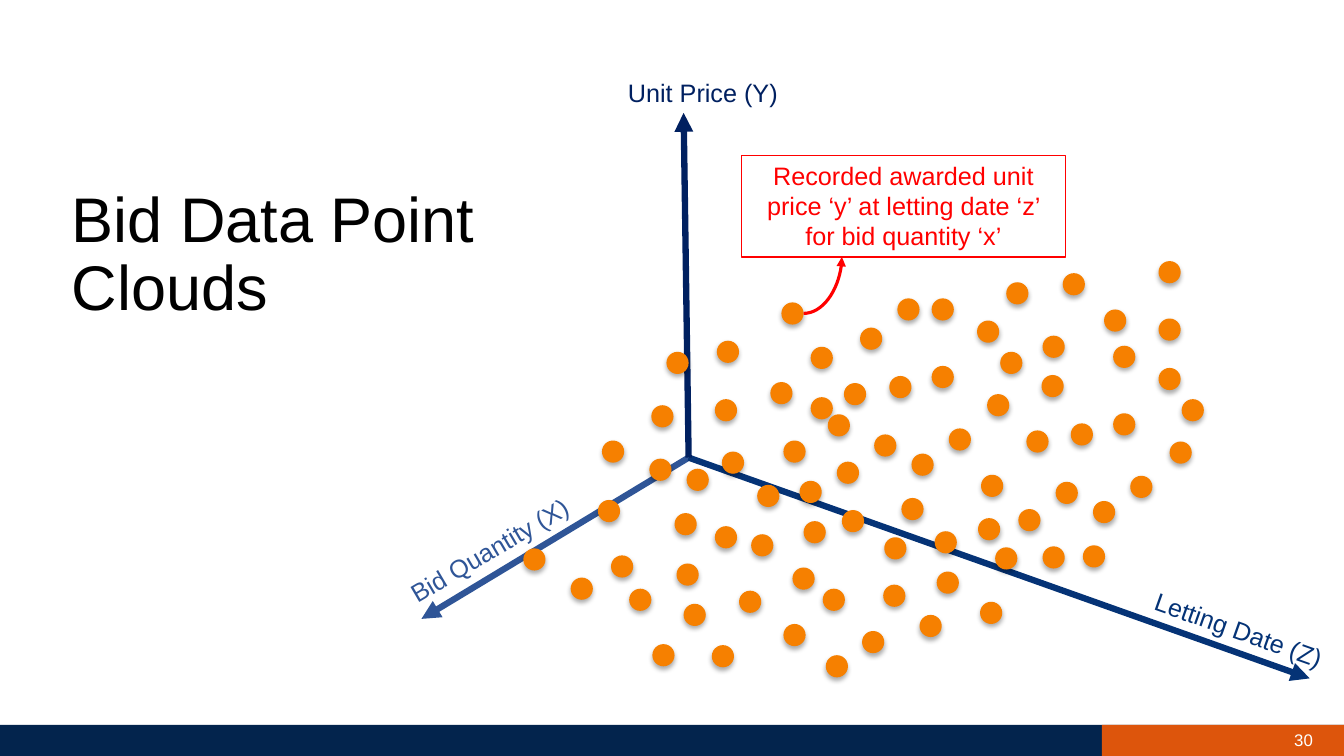
from lxml import etree
from pptx import Presentation
from pptx import util as u
from pptx.dml.color import RGBColor
from pptx.enum import shapes, text
from pptx.oxml import parse_xml
from pptx.oxml.ns import nsdecls, qn

BLACK = RGBColor(0x00, 0x00, 0x00)
WHITE = RGBColor(0xFF, 0xFF, 0xFF)
NAVY = RGBColor(0x03, 0x24, 0x4D)
BURNT_ORANGE = RGBColor(0xDD, 0x55, 0x0C)
DOT_ORANGE = RGBColor(0xF6, 0x80, 0x00)
PRICE_BLUE = RGBColor(0x00, 0x20, 0x60)
QUANTITY_BLUE = RGBColor(0x2F, 0x55, 0x97)
DATE_BLUE = RGBColor(0x05, 0x33, 0x76)
RED = RGBColor(0xFF, 0x00, 0x00)

DOT_SIZE = 0.22
DOT_SHADOW = f"""<a:effectLst {nsdecls('a')}>
  <a:outerShdw blurRad="44450" dist="27940" dir="5400000" algn="ctr" rotWithShape="0">
    <a:srgbClr val="000000"><a:alpha val="32000"/></a:srgbClr>
  </a:outerShdw>
</a:effectLst>"""

deck = Presentation()
deck.slide_width, deck.slide_height = u.Inches(13.33), u.Inches(7.5)
slide = deck.slides.add_slide(deck.slide_layouts[5])


def write(holder, wording, size, color, align=text.PP_ALIGN.LEFT, **frame_format):
    """Put one formatted paragraph into a shape and return the paragraph."""
    frame = holder.text_frame
    for name, value in {"word_wrap": True, **frame_format}.items():
        setattr(frame, name, value)
    paragraph = frame.paragraphs[0]
    paragraph.alignment = align
    run = paragraph.add_run()
    run.text = wording
    for name, value in {"name": "Arial", "size": u.Pt(size)}.items():
        setattr(run.font, name, value)
    run.font.color.rgb = color
    return paragraph


def draw_arrow(kind, start, end, color, width):
    """Draw a connector with a triangle head at its end."""
    arrow = slide.shapes.add_connector(kind, *map(u.Inches, start + end))
    arrow.line.color.rgb = color
    arrow.line.width = u.Pt(width)
    etree.SubElement(arrow.line._get_or_add_ln(), qn("a:tailEnd"), type="triangle")
    etree.SubElement(arrow._element.spPr, qn("a:effectLst"))
    return arrow


# Footer bars
for left, width, color in [(0, 13.33, NAVY), (10.93, 2.4, BURNT_ORANGE)]:
    bar = slide.shapes.add_shape(
        shapes.MSO_SHAPE.RECTANGLE, *map(u.Inches, (left, 7.19, width, 0.32)))
    bar.shadow.inherit = False
    bar.fill.solid()
    bar.fill.fore_color.rgb = color
    bar.line.fill.background()

# Title
title = slide.shapes.title
title.left, title.top, title.width, title.height = map(u.Inches, (0.61, 1.82, 5.21, 1.45))
heading = write(title, "Bid Data Point Clouds", 45, BLACK,
                vertical_anchor=text.MSO_ANCHOR.MIDDLE, auto_size=text.MSO_AUTO_SIZE.NONE)
heading.line_spacing = 0.9

# Page number
page_number = slide.shapes.add_textbox(*map(u.Inches, (10.12, 7.14, 3, 0.4)))
write(page_number, "30", 12, WHITE, text.PP_ALIGN.RIGHT,
      vertical_anchor=text.MSO_ANCHOR.MIDDLE)

# Axes with their labels: tip, colour, label, label box, rotation, wrap
origin = (6.83, 4.54)
axes = [
    ((4.18, 6.14), QUANTITY_BLUE, "Bid Quantity (X)", (3.87, 5.25, 1.98, 0.4), -30.5, False),
    ((12.99, 6.73), DATE_BLUE, "Letting Date (Z)", (11.32, 6.05, 1.96, 0.4), 19.5, False),
    ((6.78, 1.12), PRICE_BLUE, "Unit Price (Y)", (6.13, 0.72, 1.7, 0.4), 0, True),
]
for tip, color, wording, box, rotation, wrap in axes:
    draw_arrow(shapes.MSO_CONNECTOR.STRAIGHT, origin, tip, color, 4.5)
    axis_label = slide.shapes.add_textbox(*map(u.Inches, box))
    axis_label.rotation = rotation
    write(axis_label, wording, 18, color, word_wrap=wrap,
          auto_size=text.MSO_AUTO_SIZE.SHAPE_TO_FIT_TEXT)

# Bid data points, by left and top
bids = [
    (6.46, 4.02), (6.61, 3.49), (5.93, 4.96), (5.19, 5.44), (8.19, 6.5), (6.06, 5.51),
    (9.72, 5.97), (7.11, 3.38), (7.09, 3.96), (6.44, 4.55), (5.97, 4.37), (7.16, 4.48),
    (6.69, 5.09), (5.66, 5.73), (6.71, 5.59), (6.24, 5.84), (7.75, 3), (9.12, 6.1),
    (8.04, 3.44), (7.64, 3.79), (7.77, 4.37), (8.04, 3.94), (8.37, 3.8), (6.81, 4.65),
    (7.51, 4.81), (8.9, 2.96), (8.53, 3.25), (8.82, 3.73), (9.24, 2.96), (9.98, 2.8),
    (9.69, 3.18), (9.24, 3.63), (6.47, 6.39), (9.79, 3.91), (10.34, 3.33), (8.21, 4.11),
    (7.93, 4.77), (9.41, 4.25), (8.67, 4.31), (8.3, 4.58), (7.45, 5.3), (9.04, 4.5),
    (9.92, 3.49), (7.97, 5.17), (7.09, 5.22), (7.33, 5.86), (8.94, 4.94), (8.35, 5.06),
    (6.78, 5.99), (8.16, 5.84), (10.54, 2.71), (7.86, 5.63), (7.06, 6.4), (10.18, 4.27),
    (10.95, 3.07), (10.33, 3.72), (10.62, 4.2), (11.04, 3.43), (11.49, 3.16), (11.49, 3.65),
    (11.04, 4.1), (11.6, 4.38), (11.21, 4.72), (10.47, 4.78), (10.1, 5.05), (10.84, 4.97),
    (11.72, 3.96), (10.74, 5.41), (11.49, 2.59), (9.73, 4.71), (9.27, 5.27), (8.76, 5.8),
    (8.77, 5.33), (9.7, 5.14), (10.34, 5.42), (9.87, 5.43), (8.55, 6.26), (9.29, 5.67),
    (7.77, 6.19),
]
for left, top in bids:
    bid = slide.shapes.add_shape(
        shapes.MSO_SHAPE.OVAL, *map(u.Inches, (left, top, DOT_SIZE, DOT_SIZE)))
    bid.fill.solid()
    bid.fill.fore_color.rgb = DOT_ORANGE
    bid.line.fill.background()
    bid._element.spPr.append(parse_xml(DOT_SHADOW))

# Curved arrow from the recorded bid to its callout
pointer = draw_arrow(shapes.MSO_CONNECTOR.CURVE, (7.97, 3.11), (8.35, 2.55), RED, 2.25)
pointer._element.spPr.find(qn("a:prstGeom")).set("prst", "curvedConnector2")

# Callout
callout = slide.shapes.add_shape(
    shapes.MSO_SHAPE.RECTANGLE, *map(u.Inches, (7.35, 1.54, 3.22, 1.01)))
callout.shadow.inherit = False
callout.fill.background()
callout.line.color.rgb = RED
callout.line.width = u.Pt(0.75)
write(callout, "Recorded awarded unit price ‘y’ at letting date ‘z’ for bid quantity ‘x’",
      18, RED, text.PP_ALIGN.CENTER, vertical_anchor=text.MSO_ANCHOR.TOP,
      auto_size=text.MSO_AUTO_SIZE.SHAPE_TO_FIT_TEXT)

deck.save("out.pptx")
